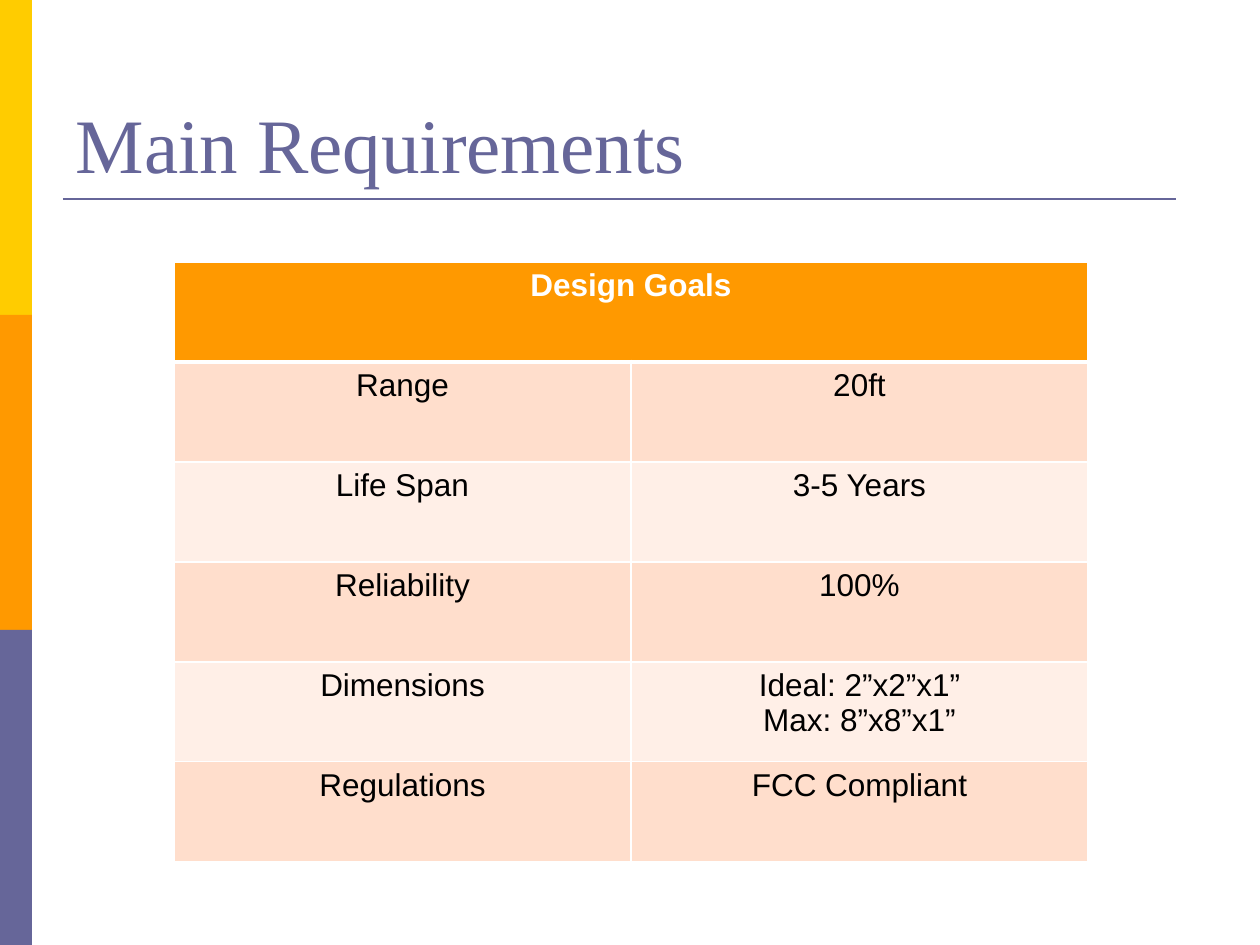
from lxml.etree import SubElement
from pptx import Presentation
from pptx.dml.color import RGBColor
from pptx.enum.shapes import MSO_CONNECTOR, MSO_SHAPE
from pptx.enum.text import MSO_ANCHOR, PP_ALIGN
from pptx.oxml.ns import qn
from pptx.util import Emu, Pt

PX = 914400 // 126
COLORS = {
    "yellow": "FFCC00", "orange": "FF9900", "violet": "666699",
    "peach": "FFDECC", "pale": "FFEFE7", "white": "FFFFFF", "black": "000000",
}
TITLE = "Main Requirements"
TABLE_HEADING = "Design Goals"
GOALS = [
    ("Range", "20ft"),
    ("Life Span", "3-5 Years"),
    ("Reliability", "100%"),
    ("Dimensions", "Ideal: 2”x2”x1”\nMax: 8”x8”x1”"),
    ("Regulations", "FCC Compliant"),
]
SIDE_BANDS = ["yellow", "orange", "violet"]
BAND_WIDTH, BAND_HEIGHT = 32, 315
TABLE_LEFT, TABLE_TOP, COLUMN_WIDTH, ROW_HEIGHT = 174, 262, 457, 100


def px(*lengths):
    return [Emu(length * PX) for length in lengths]


def rgb(name):
    return RGBColor.from_string(COLORS[name])


def style_text(paragraph, font_name, size, color, bold=False):
    for run in paragraph.runs:
        run.font.name = font_name
        run.font.size = Pt(size)
        run.font.bold = bold
        run.font.color.rgb = rgb(color)


def set_borders(cell, bottom_width):
    """Give the cell white borders; they must come before its fill in the XML."""
    properties = cell._tc.get_or_add_tcPr()
    for side, width in (("L", 1), ("R", 1), ("T", 1), ("B", bottom_width)):
        border = SubElement(properties, qn(f"a:ln{side}"), w=str(Pt(width)))
        fill = SubElement(border, qn("a:solidFill"))
        SubElement(fill, qn("a:srgbClr"), val=COLORS["white"])


def format_cell(cell, text, fill, color="black", bold=False, bottom_width=1):
    cell.text_frame.text = text
    for paragraph in cell.text_frame.paragraphs:
        paragraph.alignment = PP_ALIGN.CENTER
        style_text(paragraph, "Arial", 18, color, bold)
    set_borders(cell, bottom_width)
    cell.fill.solid()
    cell.fill.fore_color.rgb = rgb(fill)


def add_side_bands(slide):
    for index, color in enumerate(SIDE_BANDS):
        band = slide.shapes.add_shape(
            MSO_SHAPE.RECTANGLE, *px(0, index * BAND_HEIGHT, BAND_WIDTH, BAND_HEIGHT))
        band.shadow.inherit = False
        band.fill.solid()
        band.fill.fore_color.rgb = rgb(color)
        band.line.fill.background()


def add_title(slide):
    title = slide.shapes.title
    title.left, title.top, title.width, title.height = px(63, 38, 1134, 157)
    title.text_frame.text = TITLE
    title.text_frame.vertical_anchor = MSO_ANCHOR.BOTTOM
    heading = title.text_frame.paragraphs[0]
    heading.alignment = PP_ALIGN.LEFT
    style_text(heading, "Times New Roman", 44, "violet")

    rule = slide.shapes.add_connector(MSO_CONNECTOR.STRAIGHT, *px(63, 199, 1176, 199))
    rule.line.color.rgb = rgb("violet")
    rule.line.width = Pt(1.5)
    SubElement(rule._element.spPr, qn("a:effectLst"))


def add_goals_table(slide):
    row_count = len(GOALS) + 1
    table = slide.shapes.add_table(
        row_count, 2,
        *px(TABLE_LEFT, TABLE_TOP, 2 * COLUMN_WIDTH, row_count * ROW_HEIGHT)).table
    table.cell(0, 0).merge(table.cell(0, 1))
    for column in range(2):
        format_cell(table.cell(0, column), "" if column else TABLE_HEADING,
                    "orange", "white", bold=True, bottom_width=3)
    for row, goal in enumerate(GOALS, start=1):
        for column, text in enumerate(goal):
            format_cell(table.cell(row, column), text, "peach" if row % 2 else "pale")


def main():
    presentation = Presentation()
    presentation.slide_width, presentation.slide_height = px(1260, 945)
    slide = presentation.slides.add_slide(presentation.slide_layouts[5])
    add_side_bands(slide)
    add_title(slide)
    add_goals_table(slide)
    presentation.save("out.pptx")


if __name__ == "__main__":
    main()
